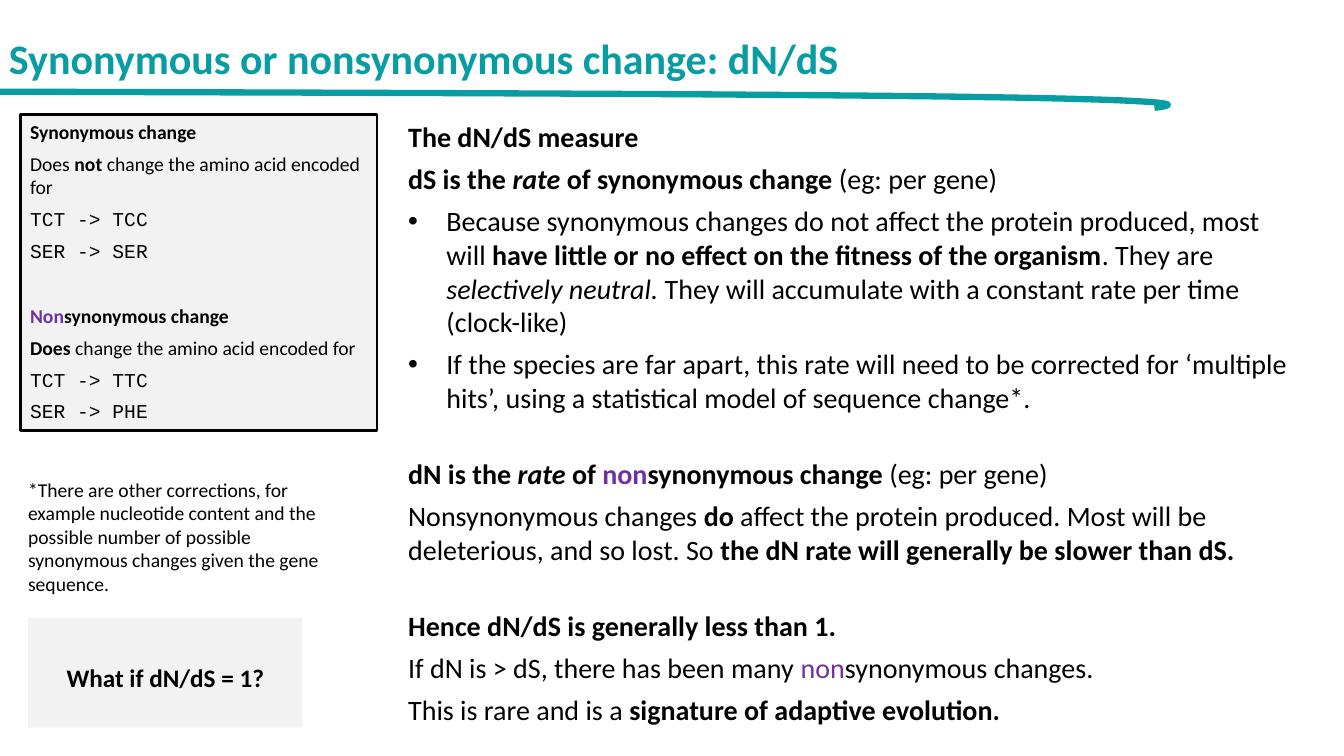
from dataclasses import dataclass
from typing import NamedTuple, Optional

from lxml import etree
from pptx import Presentation
from pptx.dml.color import RGBColor
from pptx.enum.shapes import MSO_SHAPE
from pptx.enum.text import MSO_ANCHOR, PP_ALIGN
from pptx.oxml.ns import qn
from pptx.util import Inches, Pt

RECT = MSO_SHAPE.RECTANGLE
TOP, MIDDLE = MSO_ANCHOR.TOP, MSO_ANCHOR.MIDDLE
LEFT, CENTER = PP_ALIGN.LEFT, PP_ALIGN.CENTER


@dataclass(frozen=True)
class Theme:
    teal: str = "089CA3"
    purple: str = "7030A0"
    black: str = "000000"
    panel: str = "F2F2F2"
    sans: str = "Calibri"
    mono: str = "Courier New"
    title: int = 30
    body: int = 20
    question: int = 18
    small: int = 14
    gap: int = 6


T = Theme()


class Run(NamedTuple):
    text: str
    bold: bool = False
    italic: bool = False
    color: str = T.black
    font: str = T.sans


class Para(NamedTuple):
    runs: list[Run]
    before: float = T.gap
    bullet: bool = False


@dataclass(frozen=True)
class Box:
    left: float
    top: float
    width: float
    height: float
    size: int
    paras: list[Para]
    fill: Optional[str] = None
    line: Optional[str] = None
    anchor: MSO_ANCHOR = TOP
    align: PP_ALIGN = LEFT
    margin_top: float = 0.05


def bold(text: str, color: str = T.black) -> Run:
    return Run(text, bold=True, color=color)


def code(text: str) -> Para:
    return Para([Run(text, font=T.mono)])


def section_gap(size: int) -> float:
    """Space before a new section: one line of text and two normal gaps."""
    return round(1.22 * size + 2 * T.gap, 1)


def add_bullet(p) -> None:
    pPr = p._p.get_or_add_pPr()
    pPr.set("marL", str(Inches(0.38)))
    pPr.set("indent", str(Inches(-0.38)))
    etree.SubElement(pPr, qn("a:buFont")).set("typeface", "Arial")
    etree.SubElement(pPr, qn("a:buChar")).set("char", "•")


def fill_text(tf, box: Box) -> None:
    frame = {"word_wrap": True, "vertical_anchor": box.anchor,
             "margin_top": Inches(box.margin_top)}
    for name, value in frame.items():
        setattr(tf, name, value)
    for n, para in enumerate(box.paras):
        p = tf.add_paragraph() if n else tf.paragraphs[0]
        p.alignment = box.align
        if n:
            p.space_before = Pt(para.before)
        if para.bullet:
            add_bullet(p)
        for run in para.runs:
            r = p.add_run()
            r.text = run.text
            fmt = {"size": Pt(box.size), "name": run.font,
                   "bold": run.bold, "italic": run.italic}
            for name, value in fmt.items():
                setattr(r.font, name, value)
            r.font.color.rgb = RGBColor.from_string(run.color)


def add_box(s, box: Box) -> None:
    place = [Inches(v) for v in (box.left, box.top, box.width, box.height)]
    if box.fill:
        sp = s.shapes.add_shape(RECT, *place)
        sp.shadow.inherit = False
        sp.fill.solid()
        sp.fill.fore_color.rgb = RGBColor.from_string(box.fill)
        if box.line:
            sp.line.color.rgb = RGBColor.from_string(box.line)
            sp.line.width = Pt(2)
        else:
            sp.line.fill.background()
    else:
        sp = s.shapes.add_textbox(*place)
    fill_text(sp.text_frame, box)


def add_swoosh(s, steps: int = 60) -> None:
    """Title underline: a cubic curve that hooks back at its right end."""
    controls = [(0, 0.91), (6.29, 0.93), (12.58, 0.94), (11.45, 1.07)]
    points = []
    for n in range(steps + 1):
        t = n / steps
        weights = ((1 - t) ** 3, 3 * t * (1 - t) ** 2, 3 * t * t * (1 - t), t ** 3)
        points.append(tuple(Inches(sum(w * c[axis] for w, c in zip(weights, controls)))
                            for axis in (0, 1)))
    pen = s.shapes.build_freeform(*points[0])
    pen.add_line_segments(points[1:], close=False)
    sp = pen.convert_to_shape()
    sp.shadow.inherit = False
    sp.fill.background()
    sp.line.color.rgb = RGBColor.from_string(T.teal)
    sp.line.width = Pt(4.5)


TITLE = Box(-0.01, 0, 13.31, 1.15, T.title, anchor=MIDDLE, paras=[
    Para([bold("Synonymous or nonsynonymous change: dN/dS", T.teal)])])

DEFINITIONS = Box(0.2, 1.14, 3.54, 3.13, T.small, fill=T.panel, line=T.black, paras=[
    Para([bold("Synonymous change")]),
    Para([Run("Does "), bold("not"), Run(" change the amino acid encoded for")]),
    code("TCT -> TCC"),
    code("SER -> SER"),
    Para([bold("Non", T.purple), bold("synonymous change")], section_gap(T.small)),
    Para([bold("Does"), Run(" change the amino acid encoded for")]),
    code("TCT -> TTC"),
    code("SER -> PHE"),
])

MEASURE = Box(3.95, 1.14, 9.07, 6.16, T.body, paras=[
    Para([bold("The dN/dS measure")]),
    Para([bold("dS is the "), Run("rate", True, True),
          bold(" of synonymous change"), Run(" (eg: per gene)")]),
    Para([Run("Because synonymous changes do not affect the protein produced, most will"),
          bold(" have little or no effect on the fitness of the organism"),
          Run(". They are "), Run("selectively neutral. ", italic=True),
          Run("They will accumulate with a constant rate per time (clock-like)")],
         bullet=True),
    Para([Run("If the species are far apart, this rate will need to be corrected for "
              "‘multiple hits’, using a statistical model of sequence change*.")],
         bullet=True),
    Para([bold("dN is the "), Run("rate", True, True), bold(" of "),
          bold("non", T.purple), bold("synonymous change"), Run(" (eg: per gene)")],
         section_gap(T.body) - T.gap),
    Para([Run("Nonsynonymous changes "), bold("do"),
          Run(" affect the protein produced. Most will be deleterious, and so lost. So "),
          bold("the dN rate will generally be slower than dS.")]),
    Para([bold("Hence dN/dS is generally less than 1.")], section_gap(T.body) - T.gap),
    Para([Run("If dN is > dS, there has been many "), Run("non", color=T.purple),
          Run("synonymous changes.")]),
    Para([Run("This is rare and is a "), bold("signature of adaptive evolution.")]),
])

FOOTNOTE = Box(0.18, 4.69, 3.3, 1.28, T.small, paras=[
    Para([Run("*There are other corrections, for example nucleotide content and the "
              "possible number of possible synonymous changes given the gene sequence.")])])

QUESTION = Box(0.28, 6.13, 2.72, 1.09, T.question, fill=T.panel, align=CENTER,
               margin_top=0.44, paras=[Para([bold("What if dN/dS = 1?")])])


def main() -> None:
    prs = Presentation()
    prs.slide_width, prs.slide_height = Inches(13.33), Inches(7.5)
    s = prs.slides.add_slide(prs.slide_layouts[6])
    # Title underline, then all text
    add_swoosh(s)
    for box in (TITLE, DEFINITIONS, MEASURE, FOOTNOTE, QUESTION):
        add_box(s, box)
    prs.save("out.pptx")


if __name__ == "__main__":
    main()
